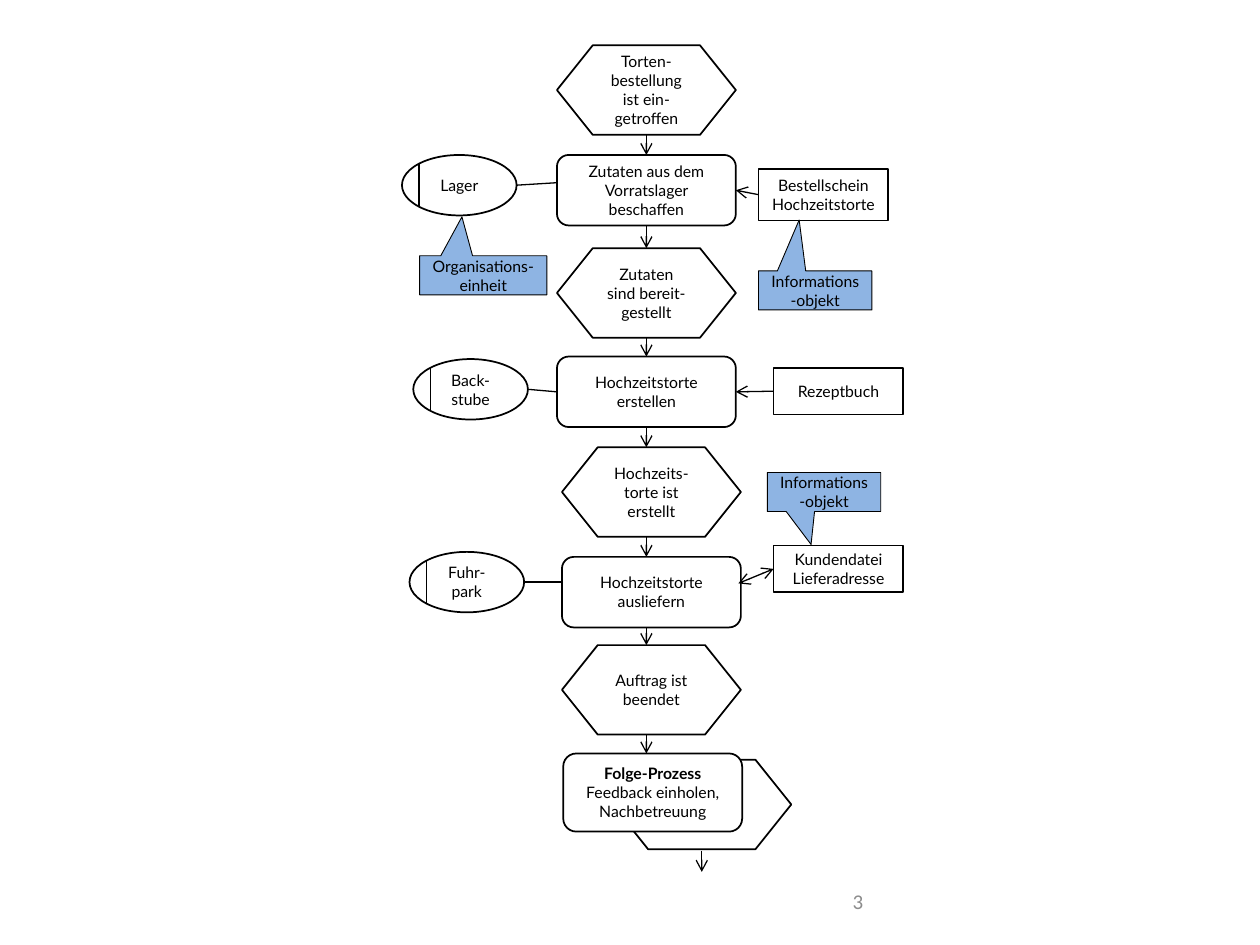
"""Builds the event-driven process chain for a wedding cake order."""
from lxml.etree import SubElement
from pptx import Presentation
from pptx.dml.color import RGBColor
from pptx.enum.shapes import MSO_CONNECTOR, MSO_SHAPE as Form
from pptx.enum.text import MSO_ANCHOR, PP_ALIGN
from pptx.oxml.ns import qn
from pptx.util import Inches, Pt

WHITE = RGBColor(0xFF, 0xFF, 0xFF)
BLACK = RGBColor(0x00, 0x00, 0x00)
GREY = RGBColor(0x8C, 0x8C, 0x8C)
BLUE = RGBColor(0x8E, 0xB4, 0xE3)

COLUMNS, ROWS = 100, 75
CELL = Inches(10) // COLUMNS
AXIS = 51.3
STEP_WIDTH, EVENT_HEIGHT, TASK_HEIGHT = 14.2, 7.1, 5.6
UNIT_WIDTH, UNIT_HEIGHT = 9.1, 4.8
OBJECT_WIDTH, NOTE_HEIGHT = 10.3, 3.1

EVENT = (Form.FLOWCHART_PREPARATION, EVENT_HEIGHT)
TASK = (Form.FLOWCHART_ALTERNATE_PROCESS, TASK_HEIGHT)
STEPS = [
    (EVENT, 44.2, 3.6, "Torten-bestellung ist ein-getroffen"),
    (TASK, 44.2, 12.3, "Zutaten aus dem Vorratslager beschaffen"),
    (EVENT, 44.2, 19.7, "Zutaten sind bereit-gestellt"),
    (TASK, 44.2, 28.3, "Hochzeitstorte erstellen"),
    (EVENT, 44.6, 35.5, "Hochzeits-torte ist erstellt"),
    (TASK, 44.6, 44.2, "Hochzeitstorte ausliefern"),
    (EVENT, 44.6, 51.2, "Auftrag ist beendet"),
]
FOLLOW_UP_TOP = 59.8
UNITS = [
    (31.9, 12.3, "Lager", (44.2, 14.5)),
    (32.8, 28.5, "Back-stube", (44.2, 31.1)),
    (32.5, 43.8, "Fuhr-park", (44.7, 46.2)),
]
OBJECTS = [
    (60.2, 13.4, 4.1, "Bestellschein Hochzeitstorte", (58.4, 15.1), False),
    (61.4, 29.2, 3.7, "Rezeptbuch", (58.4, 31.1), False),
    (61.4, 43.3, 3.7, "Kundendatei Lieferadresse", (58.6, 46.3), True),
]
NOTES = [
    (33.3, 20.3, 10.1, "Organisations-einheit", (-0.167, -1.498)),
    (60.2, 21.5, 9, "Informations-objekt", (-0.141, -1.805)),
    (60.9, 37.5, 9, "Informations-objekt", (-0.114, 1.344)),
]


def cells(*counts):
    """Turn counts of grid cells into lengths."""
    return [round(count * CELL) for count in counts]


def style_runs(paragraph, font_name, size, color):
    """Format every run of a paragraph."""
    for run in paragraph.runs:
        run.font.name = font_name
        run.font.size = Pt(size)
        run.font.color.rgb = color


def add_box(shapes, form, place, label="", fill=WHITE, line_width=1, space_after=10):
    """Add an outlined shape with a centred label."""
    box = shapes.add_shape(form, *cells(*place))
    box.shadow.inherit = False
    box.fill.solid()
    box.fill.fore_color.rgb = fill
    box.line.color.rgb = BLACK
    box.line.width = Pt(line_width)
    if label:
        box.text_frame.word_wrap = True
        box.text_frame.vertical_anchor = MSO_ANCHOR.MIDDLE
        paragraph = box.text_frame.paragraphs[0]
        paragraph.text = label
        paragraph.alignment = PP_ALIGN.CENTER
        paragraph.space_after = Pt(space_after)
        style_runs(paragraph, "Lato", 9, BLACK)
    return box


def add_link(shapes, start, end, arrows=()):
    """Add a thin line with arrowheads at the named ends."""
    link = shapes.add_connector(MSO_CONNECTOR.STRAIGHT, *cells(*start, *end))
    link.line.color.rgb = BLACK
    link.line.width = Pt(0.75)
    properties = link.element.spPr
    for arrow in arrows:
        SubElement(properties.find(qn("a:ln")), qn(f"a:{arrow}"), type="arrow")
    SubElement(properties, qn("a:effectLst"))


def add_steps(shapes):
    """Add the chain of events and tasks, each pointing at the next."""
    next_tops = [top for _, _, top, _ in STEPS[1:]] + [FOLLOW_UP_TOP]
    for ((form, height), left, top, label), next_top in zip(STEPS, next_tops):
        add_box(shapes, form, (left, top, STEP_WIDTH, height), label)
        add_link(shapes, (AXIS, top + height), (AXIS, next_top), ["tailEnd"])


def add_unit(shapes, left, top, label, task_point):
    """Add an organisational unit joined to its task."""
    unit = shapes.add_group_shape().shapes
    add_box(unit, Form.OVAL, (left, top, UNIT_WIDTH, UNIT_HEIGHT), label)
    bar = left + 1.35
    add_link(unit, (bar, top + 0.7), (bar, top + UNIT_HEIGHT - 0.7))
    add_link(shapes, task_point, (left + UNIT_WIDTH, top + UNIT_HEIGHT / 2))


def add_object(shapes, left, top, height, label, task_point, two_way):
    """Add an information object with an arrow to its task."""
    add_box(shapes, Form.RECTANGLE, (left, top, OBJECT_WIDTH, height), label)
    arrows = ["headEnd", "tailEnd"] if two_way else ["tailEnd"]
    add_link(shapes, (left, top + height / 2), task_point, arrows)


def add_note(shapes, left, top, width, label, tip):
    """Add a blue callout whose tip is given in shares of its size."""
    note = add_box(shapes, Form.RECTANGULAR_CALLOUT, (left, top, width, NOTE_HEIGHT),
                   label, BLUE, 0.5, 0)
    note.adjustments[0], note.adjustments[1] = tip


def add_follow_up(shapes):
    """Add the follow-up process in front of its event."""
    follow_up = shapes.add_group_shape().shapes
    add_box(follow_up, EVENT[0], (48.6, 60.3, STEP_WIDTH, EVENT_HEIGHT))
    process = add_box(follow_up, TASK[0], (44.7, FOLLOW_UP_TOP, STEP_WIDTH, 6.2),
                      "Folge-Prozess\vFeedback einholen, Nachbetreuung")
    process.text_frame.paragraphs[0].runs[0].font.bold = True
    add_link(shapes, (55.7, 67.5), (55.7, 69.2), ["tailEnd"])


def add_page_number(shapes, number):
    """Add the page number at the foot of the slide."""
    frame = shapes.add_textbox(*cells(46.2, 69.5, 23.3, 4)).text_frame
    frame.word_wrap = True
    frame.vertical_anchor = MSO_ANCHOR.MIDDLE
    paragraph = frame.paragraphs[0]
    paragraph.text = number
    paragraph.alignment = PP_ALIGN.RIGHT
    style_runs(paragraph, "Calibri", 12, GREY)


def main():
    """Build and save the slide."""
    deck = Presentation()
    deck.slide_width, deck.slide_height = cells(COLUMNS, ROWS)
    shapes = deck.slides.add_slide(deck.slide_layouts[6]).shapes
    add_page_number(shapes, "3")
    add_steps(shapes)
    for unit in UNITS:
        add_unit(shapes, *unit)
    for information in OBJECTS:
        add_object(shapes, *information)
    add_follow_up(shapes)
    for note in NOTES:
        add_note(shapes, *note)
    deck.save("out.pptx")


if __name__ == "__main__":
    main()
